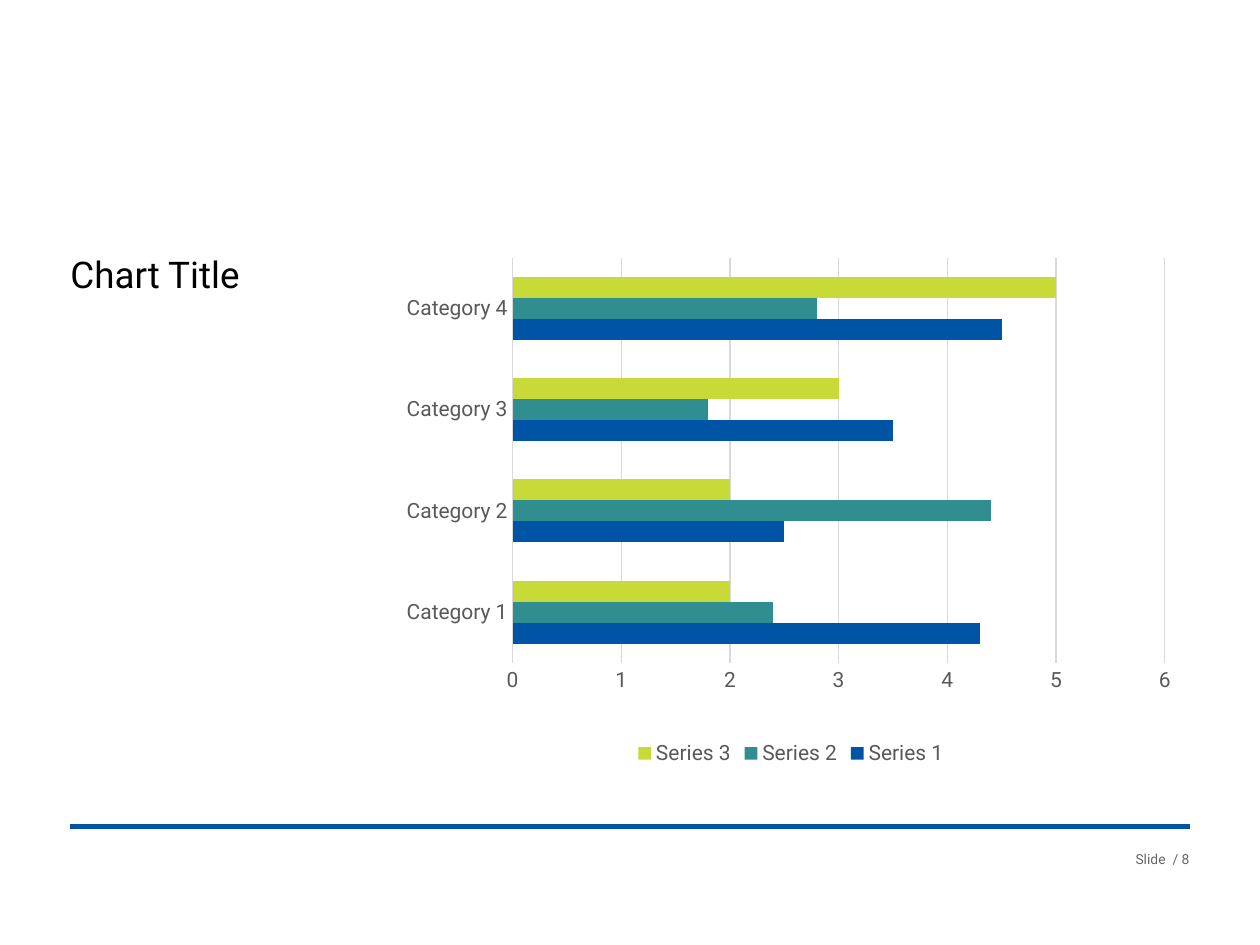
"""Build a slide with a title, a clustered bar chart and a footer."""
import pptx
import pptx.chart.data
import pptx.dml.color
import pptx.enum.chart
import pptx.enum.shapes
import pptx.enum.text
import pptx.oxml
import pptx.oxml.ns
import pptx.util

Cm = pptx.util.Cm
Pt = pptx.util.Pt
RGBColor = pptx.dml.color.RGBColor
BLUE = RGBColor(0x00, 0x54, 0xA6)
TEAL = RGBColor(0x30, 0x8E, 0x90)
LIME = RGBColor(0xC7, 0xDA, 0x37)
BLACK = RGBColor(0x00, 0x00, 0x00)
GREY = RGBColor(0x59, 0x59, 0x59)
PALE = RGBColor(0xD9, 0xD9, 0xD9)
NOTE = RGBColor(0x66, 0x66, 0x66)

LEFT, RIGHT, TOP = 1.42, 23.98, 5.18
CATS = [f"Category {n}" for n in range(1, 5)]
SERIES = [
    ("Series 1", (4.3, 2.5, 3.5, 4.5), BLUE),
    ("Series 2", (2.4, 4.4, 1.8, 2.8), TEAL),
    ("Series 3", (2, 2, 3, 5), LIME),
]
PLOT = {"x": 0.15, "y": 0, "w": 0.82, "h": 0.79}


class Deck:
    """Hold the style and the current slide."""

    face = "Roboto"

    def __init__(self):
        self.file = pptx.Presentation()
        self.file.slide_width, self.file.slide_height = Cm(25.4), Cm(19.05)
        self.slide = self.file.slides.add_slide(self.file.slide_layouts[5])

    def font(self, font, size, color):
        font.name, font.size = self.face, Pt(size)
        font.color.rgb = color

    def text(self, shape, words, size, color, align, pad=(0, 0)):
        frame = shape.text_frame
        frame.word_wrap = True
        frame.auto_size = pptx.enum.text.MSO_AUTO_SIZE.NONE
        frame.vertical_anchor = pptx.enum.text.MSO_ANCHOR.TOP
        frame.margin_left = frame.margin_top = 0
        frame.margin_right, frame.margin_bottom = map(Cm, pad)
        frame.text = words
        par = frame.paragraphs[0]
        par.alignment = align
        self.font(par.font, size, color)
        return par

    def title(self, words, box):
        shape = self.slide.shapes.title
        shape.left, shape.top, shape.width, shape.height = map(Cm, box)
        par = self.text(shape, words, 21, BLACK,
                        pptx.enum.text.PP_ALIGN.LEFT, (0.25, 0.13))
        par.line_spacing = 0.9

    def label(self, words, box):
        shape = self.slide.shapes.add_textbox(*map(Cm, box))
        self.text(shape, words, 7.9, NOTE, pptx.enum.text.PP_ALIGN.RIGHT)

    def rule(self, y):
        line = self.slide.shapes.add_connector(
            pptx.enum.shapes.MSO_CONNECTOR.STRAIGHT,
            Cm(LEFT), Cm(y), Cm(RIGHT), Cm(y))
        line.line.color.rgb, line.line.width = BLUE, Pt(3)
        line._element.spPr.append(pptx.oxml.parse_xml(
            f'<a:effectLst {pptx.oxml.ns.nsdecls("a")}/>'))

    def axis(self, axis):
        none = pptx.enum.chart.XL_TICK_MARK.NONE
        axis.major_tick_mark = axis.minor_tick_mark = none
        self.font(axis.tick_labels.font, 12, GREY)

    def thin(self, line):
        line.color.rgb, line.width = PALE, Pt(0.75)

    def chart(self, box):
        data = pptx.chart.data.CategoryChartData()
        data.categories = CATS
        for name, vals, _ in SERIES:
            data.add_series(name, vals)
        kind = pptx.enum.chart.XL_CHART_TYPE.BAR_CLUSTERED
        chart = self.slide.shapes.add_chart(
            kind, *map(Cm, box), data).chart
        chart.has_title = False
        chart.font.name, chart.font.size = "Calibri", Pt(10)
        chart.font.color.rgb = BLACK
        plot = chart.plots[0]
        plot.gap_width, plot.vary_by_categories = 182, False
        for part, (_, _, color) in zip(plot.series, SERIES):
            part.format.fill.solid()
            part.format.fill.fore_color.rgb = color
        self.axis(chart.category_axis)
        self.thin(chart.category_axis.format.line)
        vals = chart.value_axis
        self.axis(vals)
        vals.format.line.fill.background()
        vals.has_major_gridlines = True
        self.thin(vals.major_gridlines.format.line)
        vals.tick_labels.number_format = "General"
        vals.tick_labels.number_format_is_linked = False
        chart.has_legend = True
        chart.legend.position = pptx.enum.chart.XL_LEGEND_POSITION.BOTTOM
        chart.legend.include_in_layout = False
        self.font(chart.legend.font, 12, GREY)
        self.layout(chart)

    def layout(self, chart):
        area = chart._chartSpace.chart.plotArea
        for old in area.findall(pptx.oxml.ns.qn("c:layout")):
            area.remove(old)
        modes = "".join(f'<c:{k}Mode val="edge"/>' for k in "xy")
        sizes = "".join(f'<c:{k} val="{v}"/>' for k, v in PLOT.items())
        area.insert(0, pptx.oxml.parse_xml(
            f'<c:layout {pptx.oxml.ns.nsdecls("c")}><c:manualLayout>'
            f'<c:layoutTarget val="inner"/>{modes}{sizes}'
            '</c:manualLayout></c:layout>'))


def main():
    deck = Deck()
    deck.rule(16.66)
    deck.label("Slide  / 8", (21.36, 17.14, 2.62, 0.33))
    deck.title("Chart Title", (LEFT, TOP, 5.46, 5.33))
    deck.chart((7.93, TOP, 16.03, 10.36))
    deck.file.save("out.pptx")


if __name__ == "__main__":
    main()
